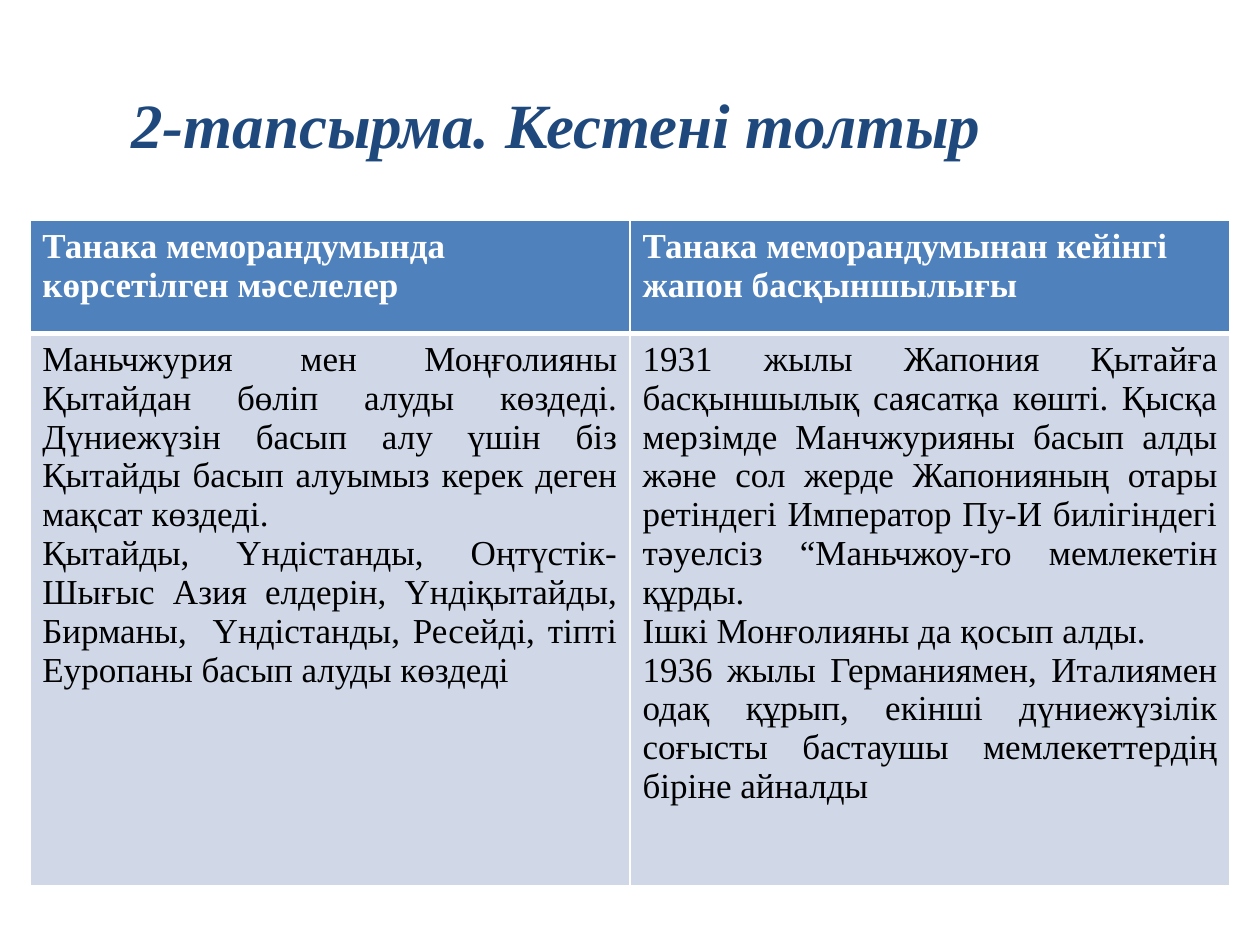
import pptx
import pptx.dml.color
import pptx.enum.text
import pptx.oxml
import pptx.oxml.ns
import pptx.util
from pptx.util import Cm

COLORS = {
    "title": "1F497D",
    "header": "4F81BD",
    "body": "D0D8E8",
    "light": "FFFFFF",
    "dark": "000000",
}
FONT = "Times New Roman"


def add_run(paragraph, text, size, color, bold=False, italic=False):
    run = paragraph.add_run()
    run.text = text
    run.font.name = FONT
    run.font.size = pptx.util.Pt(size)
    run.font.bold = bold
    run.font.italic = italic
    run.font.color.rgb = pptx.dml.color.RGBColor.from_string(COLORS[color])


def add_borders(cell, widths):
    properties = cell._tc.get_or_add_tcPr()
    for position, (side, points) in enumerate(widths.items()):
        properties.insert(position, pptx.oxml.parse_xml(
            f'<a:{side} {pptx.oxml.ns.nsdecls("a")} w="{pptx.util.Pt(points)}">'
            f'<a:solidFill><a:srgbClr val="{COLORS["light"]}"/></a:solidFill></a:{side}>'))


presentation = pptx.Presentation()
presentation.slide_width = Cm(25.4)
presentation.slide_height = Cm(19.05)
slide = presentation.slides.add_slide(presentation.slide_layouts[6])

# Comparison table: one header row, one row of answers
rows = [
    [
        ["Танака меморандумында көрсетілген мәселелер"],
        ["Танака меморандумынан кейінгі жапон басқыншылығы"],
    ],
    [
        [
            "Маньчжурия мен Моңғолияны Қытайдан бөліп алуды көздеді. Дүниежүзін басып алу "
            "үшін біз Қытайды басып алуымыз керек деген мақсат көздеді.",
            "Қытайды, Үндістанды, Оңтүстік-Шығыс Азия елдерін, Үндіқытайды, Бирманы,  "
            "Үндістанды, Ресейді, тіпті Еуропаны басып алуды көздеді",
        ],
        [
            "1931 жылы Жапония Қытайға басқыншылық саясатқа көшті. Қысқа мерзімде "
            "Манчжурияны басып алды және сол жерде Жапонияның отары ретіндегі Император "
            "Пу-И билігіндегі тәуелсіз “Маньчжоу-го мемлекетін құрды.",
            "Ішкі Монғолияны да қосып алды.",
            "1936 жылы Германиямен, Италиямен одақ құрып, екінші дүниежүзілік соғысты "
            "бастаушы мемлекеттердің біріне айналды",
        ],
    ],
]
row_heights = [Cm(2.28), Cm(11.12)]
comparison = slide.shapes.add_table(
    2, 2, Cm(0.6), Cm(4.45), Cm(24.2), sum(row_heights)).table

for row_index, row in enumerate(rows):
    is_header = row_index == 0
    comparison.rows[row_index].height = row_heights[row_index]
    for column_index, paragraphs in enumerate(row):
        cell = comparison.cell(row_index, column_index)
        cell.fill.solid()
        cell.fill.fore_color.rgb = pptx.dml.color.RGBColor.from_string(
            COLORS["header" if is_header else "body"])
        # The rule between header and answers is thicker
        add_borders(cell, {"lnL": 1, "lnR": 1,
                           "lnT": 1 if is_header else 3,
                           "lnB": 3 if is_header else 1})
        for number, text in enumerate(paragraphs):
            frame = cell.text_frame
            paragraph = frame.add_paragraph() if number else frame.paragraphs[0]
            if not is_header:
                paragraph.alignment = pptx.enum.text.PP_ALIGN.JUSTIFY
            add_run(paragraph, text, 20, "light" if is_header else "dark", bold=is_header)

# Title
title = slide.shapes.add_textbox(Cm(2.4), Cm(1.58), Cm(18.46), Cm(1.8)).text_frame
title.word_wrap = True
title.vertical_anchor = pptx.enum.text.MSO_ANCHOR.BOTTOM
add_run(title.paragraphs[0], "2-тапсырма. Кестені толтыр", 36, "title", bold=True, italic=True)

presentation.save("out.pptx")
